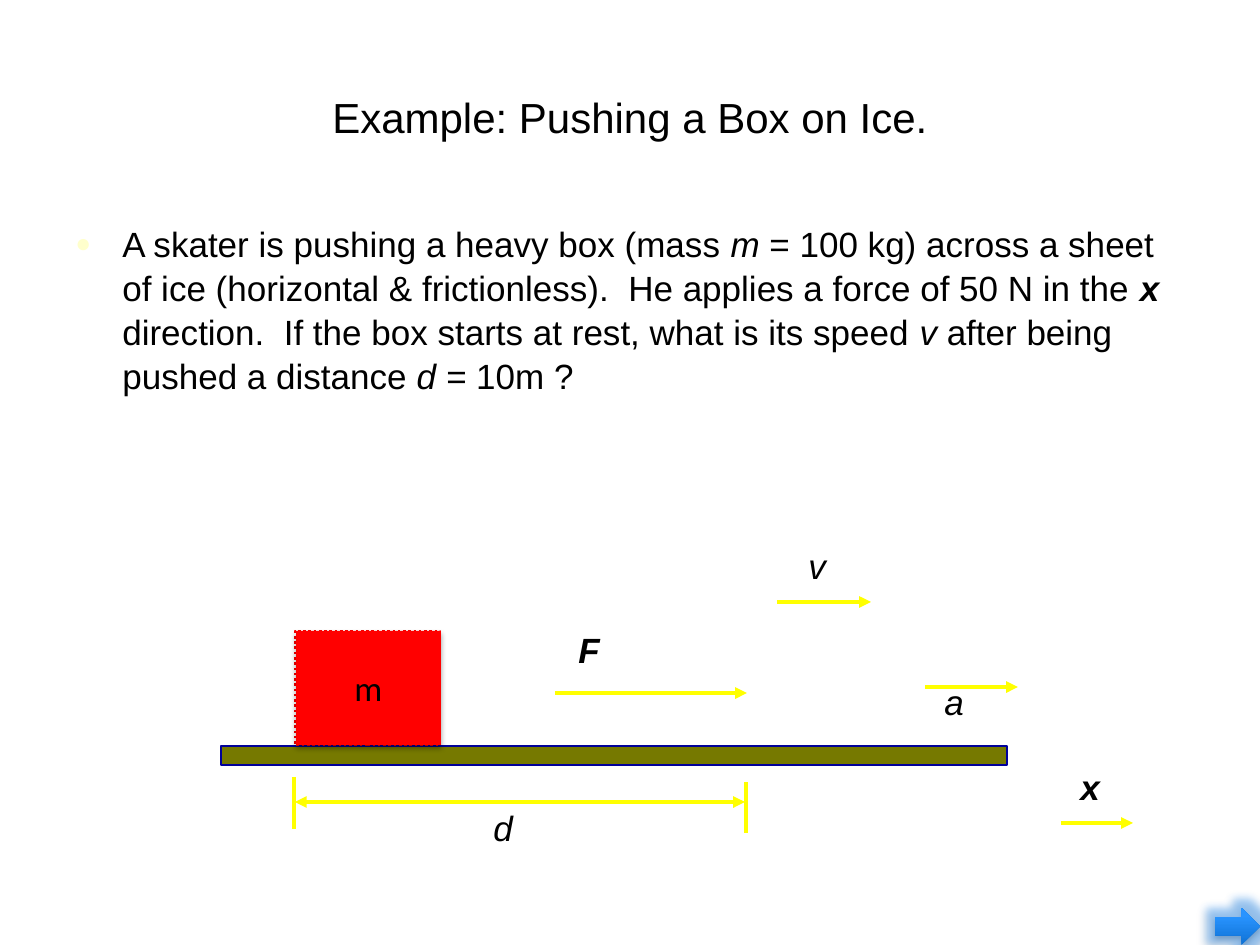
from lxml.etree import SubElement
from pptx import Presentation
from pptx.dml.color import RGBColor
from pptx.enum.dml import MSO_LINE_DASH_STYLE as Dash
from pptx.enum.shapes import MSO_CONNECTOR as Connector, MSO_SHAPE as Shape
from pptx.enum.text import MSO_ANCHOR as Anchor, MSO_AUTO_SIZE as AutoSize, PP_ALIGN as Align
from pptx.oxml.ns import qn
from pptx.util import Emu, Pt

EMU_PER_PX = 914400 / 126
BLACK = RGBColor(0x00, 0x00, 0x00)
YELLOW = RGBColor(0xFF, 0xFF, 0x00)
CREAM = RGBColor(0xFF, 0xFF, 0xCC)
RED = RGBColor(0xFF, 0x00, 0x00)
DARK_RED = RGBColor(0xFC, 0x00, 0x00)
OLIVE = RGBColor(0x76, 0x79, 0x00)
NAVY = RGBColor(0x01, 0x01, 0x99)
DEEP_BLUE = RGBColor(0x0F, 0x72, 0xD5)
BRIGHT_BLUE = RGBColor(0x29, 0x94, 0xFF)

TITLE = "Example: Pushing a Box on Ice."
PROBLEM = [  # text, bold, italic
    ("A skater is pushing a heavy box (mass ", False, False),
    ("m", False, True),
    (" = 100 kg) across a sheet of ice (horizontal & frictionless).  "
     "He applies a force of 50 N in the ", False, False),
    ("x", True, True),
    (" direction.  If the box starts at rest, what is its speed ", False, False),
    ("v", False, True),
    (" after being pushed a distance ", False, False),
    ("d = ", False, True),
    ("10m ?", False, False),
]
LABELS = [  # text, left, top, width, bold
    ("d", 481, 805, 45, False),
    ("F", 566, 627, 47, True),
    ("v", 796, 543, 43, False),
    ("a", 932, 679, 45, False),
    ("x", 1068, 764, 45, True),
]
LINES = [  # start, end, arrowheads
    ((294, 777), (294, 829), ()),
    ((746, 782), (746, 833), ()),
    ((295, 802), (745, 802), ("headEnd", "tailEnd")),
    ((555, 693), (747, 693), ("tailEnd",)),
    ((777, 602), (871, 602), ("tailEnd",)),
    ((925, 687), (1018, 687), ("tailEnd",)),
    ((1061, 823), (1133, 823), ("tailEnd",)),
]


def px(*lengths):
    return [Emu(round(length * EMU_PER_PX)) for length in lengths]


def style(span, size, bold=False, italic=False, name="Arial"):
    font = span.font
    font.name, font.size, font.bold, font.italic = name, Pt(size), bold, italic
    font.color.rgb = BLACK


def add_title(page):
    title = page.shapes.title
    title.left, title.top, title.width, title.height = px(63, 38, 1134, 157)
    frame = title.text_frame
    frame.text = TITLE
    frame.vertical_anchor = Anchor.MIDDLE
    para = frame.paragraphs[0]
    para.alignment = Align.CENTER
    style(para.runs[0], 24)


def add_bullet(para, indent):
    props = para._p.get_or_add_pPr()
    props.set("marL", str(indent))
    props.set("indent", str(-indent))
    color = SubElement(props, qn("a:buClr"))
    SubElement(color, qn("a:srgbClr"), val=str(CREAM))
    SubElement(props, qn("a:buSzPct"), val="75000")
    SubElement(props, qn("a:buFont"), typeface="Arial")
    SubElement(props, qn("a:buChar"), char="●")


def add_problem(page):
    box = page.shapes.add_textbox(*px(63, 214, 1134, 624))
    frame = box.text_frame
    frame.word_wrap = True
    para = frame.paragraphs[0]
    para.line_spacing = 1.05
    add_bullet(para, px(47)[0])
    for text, bold, italic in PROBLEM:
        span = para.add_run()
        span.text = text
        style(span, 20, bold, italic)


def add_label(page, text, left, top, width, bold):
    box = page.shapes.add_textbox(*px(left, top, width, 50))
    frame = box.text_frame
    frame.text = text
    frame.word_wrap = False
    frame.auto_size = AutoSize.SHAPE_TO_FIT_TEXT
    para = frame.paragraphs[0]
    para.line_spacing = 0.9
    style(para.runs[0], 20, bold, italic=True)


def add_line(page, start, end, heads):
    line = page.shapes.add_connector(Connector.STRAIGHT, *px(*start, *end))
    line.line.color.rgb = YELLOW
    line.line.width = Pt(2.25)
    for head in heads:
        SubElement(line.line._get_or_add_ln(), qn(f"a:{head}"), type="triangle")
    SubElement(line._element.spPr, qn("a:effectLst"))


def add_block(page, kind, place, fill=None, outline=None, width=1):
    block = page.shapes.add_shape(kind, *px(*place))
    block.shadow.inherit = False
    if fill is None:
        block.fill.background()
    else:
        block.fill.solid()
        block.fill.fore_color.rgb = fill
    if outline is None:
        block.line.fill.background()
    else:
        block.line.color.rgb = outline
        block.line.width = Pt(width)
    return block


def add_effect(block, kind, color, opacity, **sizes):
    """Append a glow or shadow; a glow must come before a shadow."""
    effects = block._element.spPr.find(qn("a:effectLst"))
    effect = SubElement(effects, qn(f"a:{kind}"),
                        {key: str(int(value)) for key, value in sizes.items()})
    tint = SubElement(effect, qn("a:srgbClr"), val=str(color))
    SubElement(tint, qn("a:alpha"), val=str(opacity * 1000))


def add_drop_shadow(block):
    add_effect(block, "outerShdw", BLACK, 35,
               blurRad=Pt(3.1), dist=Pt(1.8), dir=90 * 60000)


def add_mass(page):
    mass = add_block(page, Shape.RECTANGLE, (296, 631, 145, 114), RED)
    add_drop_shadow(mass)
    frame = mass.text_frame
    frame.text = "m"
    frame.word_wrap = False
    frame.vertical_anchor = Anchor.MIDDLE
    para = frame.paragraphs[0]
    para.alignment = Align.CENTER
    style(para.runs[0], 20, name="Calibri")


def add_next_arrow(page):
    arrow = add_block(page, Shape.RIGHT_ARROW, (1215, 908, 45, 37))
    arrow.fill.gradient()
    arrow.fill.gradient_angle = 90
    stops = zip(arrow.fill.gradient_stops, (DEEP_BLUE, BRIGHT_BLUE), (0, 0.8))
    for stop, color, position in stops:
        stop.color.rgb = color
        stop.position = position
    add_effect(arrow, "glow", BRIGHT_BLUE, 40, rad=px(18)[0])
    add_drop_shadow(arrow)


def main():
    deck = Presentation()
    deck.slide_width, deck.slide_height = px(1260, 945)
    page = deck.slides.add_slide(deck.slide_layouts[5])
    add_title(page)
    add_problem(page)
    add_block(page, Shape.RECTANGLE, (221, 746, 786, 19), OLIVE, NAVY)
    start = add_block(page, Shape.RECTANGLE, (295, 631, 145, 114), None, DARK_RED, 1.5)
    start.line.dash_style = Dash.ROUND_DOT
    add_mass(page)
    for line in LINES:
        add_line(page, *line)
    for label in LABELS:
        add_label(page, *label)
    add_next_arrow(page)
    deck.save("out.pptx")


if __name__ == "__main__":
    main()
